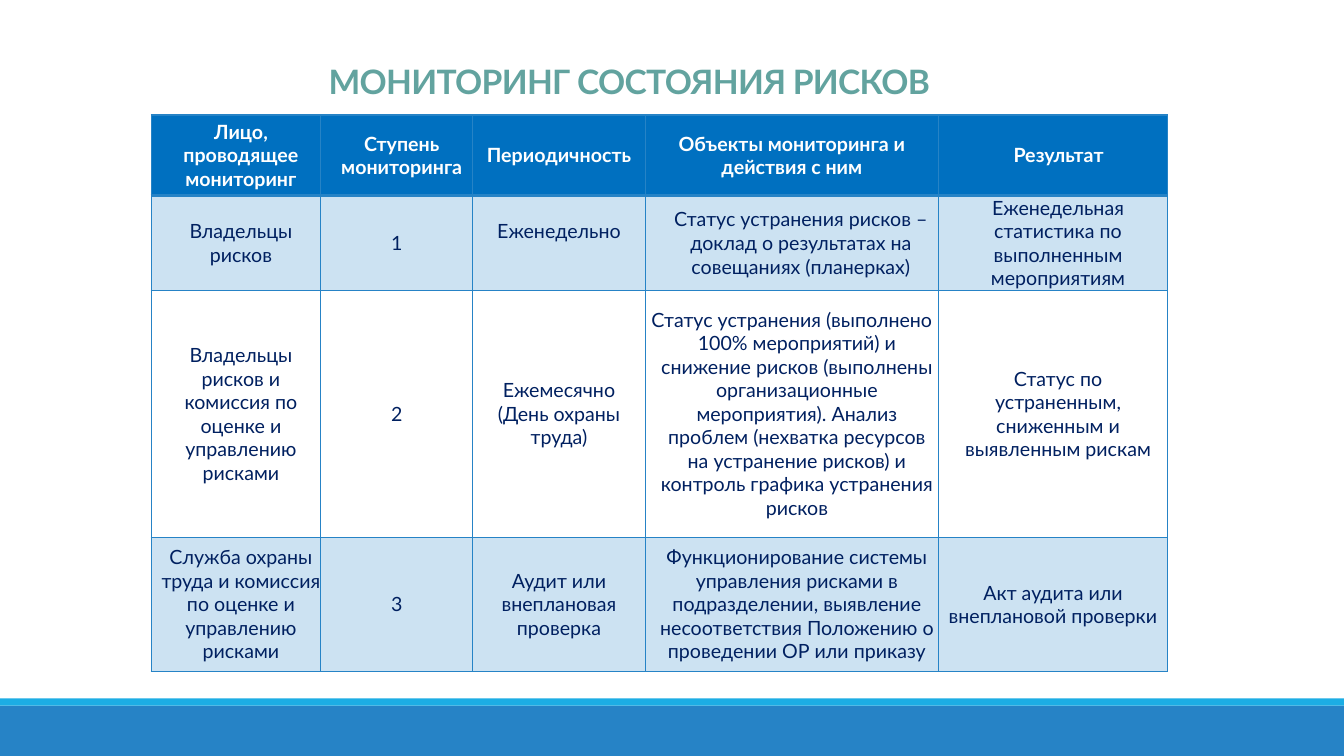
from lxml import etree
from pptx import Presentation
from pptx import util as u
from pptx.dml.color import RGBColor
from pptx.enum import shapes, text
from pptx.oxml import ns

In = u.Inches
BLUE, LINE, NAVY = "0070C0", "2683C6", "002060"


def paint(fill, color):
    fill.solid()
    fill.fore_color.rgb = RGBColor.from_string(color)


def write(par, words, size, color, bold):
    par.alignment = text.PP_ALIGN.CENTER
    run = par.add_run()
    run.text = words
    form = {"name": "Lato", "size": u.Pt(size), "bold": bold}
    for key, val in form.items():
        setattr(run.font, key, val)
    paint(run.font.fill, color)
    return run


deck = Presentation()
deck.slide_width, deck.slide_height = In(13.33), In(7.5)
slide = deck.slides.add_slide(deck.slide_layouts[6])

# Bottom bars
for top, high, color in [(7, 0.5, LINE), (6.93, 0.07, "1CADE4")]:
    bar = slide.shapes.add_shape(
        shapes.MSO_SHAPE.RECTANGLE, 0, In(top), In(13.33), In(high))
    bar.shadow.inherit = False
    paint(bar.fill, color)
    bar.line.fill.background()

# Each cell: text, left indent, first-line indent
rows = [
    [("Лицо, проводящее мониторинг", 0.1, 0),
     ("Ступень мониторинга", 0.1, 0),
     ("Периодичность", 0, 0),
     ("Объекты мониторинга и действия с ним", 0, 0),
     ("Результат", 0.11, 0)],
    [("Владельцы\nрисков", 0.1, 0),
     ("1", 0, 0),
     ("Еженедельно", 0, 0),
     ("Статус устранения рисков – доклад о результатах на совещаниях "
      "(планерках)", 0.18, 0),
     ("Еженедельная статистика по выполненным мероприятиям", 0.1, 0)],
    [("Владельцы рисков и комиссия по оценке и управлению рисками", 0.1, 0),
     ("2", 0, 0),
     ("Ежемесячно\n(День охраны труда)", 0, 0),
     ("Статус устранения (выполнено 100% мероприятий) и снижение рисков "
      "(выполнены организационные мероприятия). Анализ проблем (нехватка "
      "ресурсов на устранение рисков) и контроль графика устранения рисков",
      0.1, -0.1),
     ("Статус по устраненным, сниженным и выявленным рискам", 0.1, 0)],
    [("Служба охраны труда и комиссия по оценке и управлению рисками", 0.1, 0),
     ("3", 0, 0),
     ("Аудит или внеплановая проверка", 0, 0),
     ("Функционирование системы управления рисками в подразделении, "
      "выявление несоответствия Положению о проведении ОР или приказу",
      0.1, 0),
     ("Акт аудита или внеплановой проверки", 0, 0)],
]
wide = [1.68, 1.51, 1.71, 2.91, 2.27]
tall = [0.8, 0.94, 2.45, 1.33]

# Table
grid = slide.shapes.add_table(
    4, 5, In(1.5), In(1.14), In(sum(wide)), In(sum(tall))).table
grid.first_row = grid.horz_banding = False
for col, w in zip(grid.columns, wide):
    col.width = In(w)

for r, row in enumerate(rows):
    grid.rows[r].height = In(tall[r])
    head = r == 0
    for c, (words, left, first) in enumerate(row):
        cell = grid.cell(r, c)
        side = In(0.07 if head else 0)
        form = {"margin_left": side, "margin_right": side, "margin_top": 0,
                "margin_bottom": 0,
                "vertical_anchor": text.MSO_ANCHOR.MIDDLE}
        for key, val in form.items():
            setattr(cell, key, val)

        # Borders, heavier under the header
        props = cell._tc.get_or_add_tcPr()
        for edge in "LRTB":
            thick = (r, edge) in [(0, "B"), (1, "T")]
            line = etree.SubElement(props, ns.qn("a:ln" + edge),
                                    w=str(u.Pt(2 if thick else 1)))
            solid = etree.SubElement(line, ns.qn("a:solidFill"))
            etree.SubElement(solid, ns.qn("a:srgbClr"), val=LINE)

        # Fill: solid header, pale odd rows, clear even row
        if r == 2:
            cell.fill.background()
        else:
            paint(cell.fill, BLUE)
            if not head:
                tint = props.find(ns.qn("a:solidFill"))[0]
                etree.SubElement(tint, ns.qn("a:alpha"), val="20000")

        # Text
        frame = cell.text_frame
        for i, part in enumerate(words.split("\n")):
            par = frame.add_paragraph() if i else frame.paragraphs[0]
            write(par, part, 14, "FFFFFF" if head else NAVY, head)
            par._p.get_or_add_pPr().set("marL", str(In(left)))
            par._p.get_or_add_pPr().set("indent", str(In(first)))

# The weekly entry sits above the middle of its cell
grid.cell(1, 2).margin_bottom = In(0.23)

# Title
box = slide.shapes.add_textbox(In(2.42), 0, In(7.64), In(1.05))
frame = box.text_frame
frame.word_wrap = True
frame.vertical_anchor = text.MSO_ANCHOR.BOTTOM
par = frame.paragraphs[0]
par.line_spacing = 0.85
run = write(par, "МОНИТОРИНГ СОСТОЯНИЯ РИСКОВ", 24, "62A39F", True)
run._r.get_or_add_rPr().set("spc", "-50")

deck.save("out.pptx")
